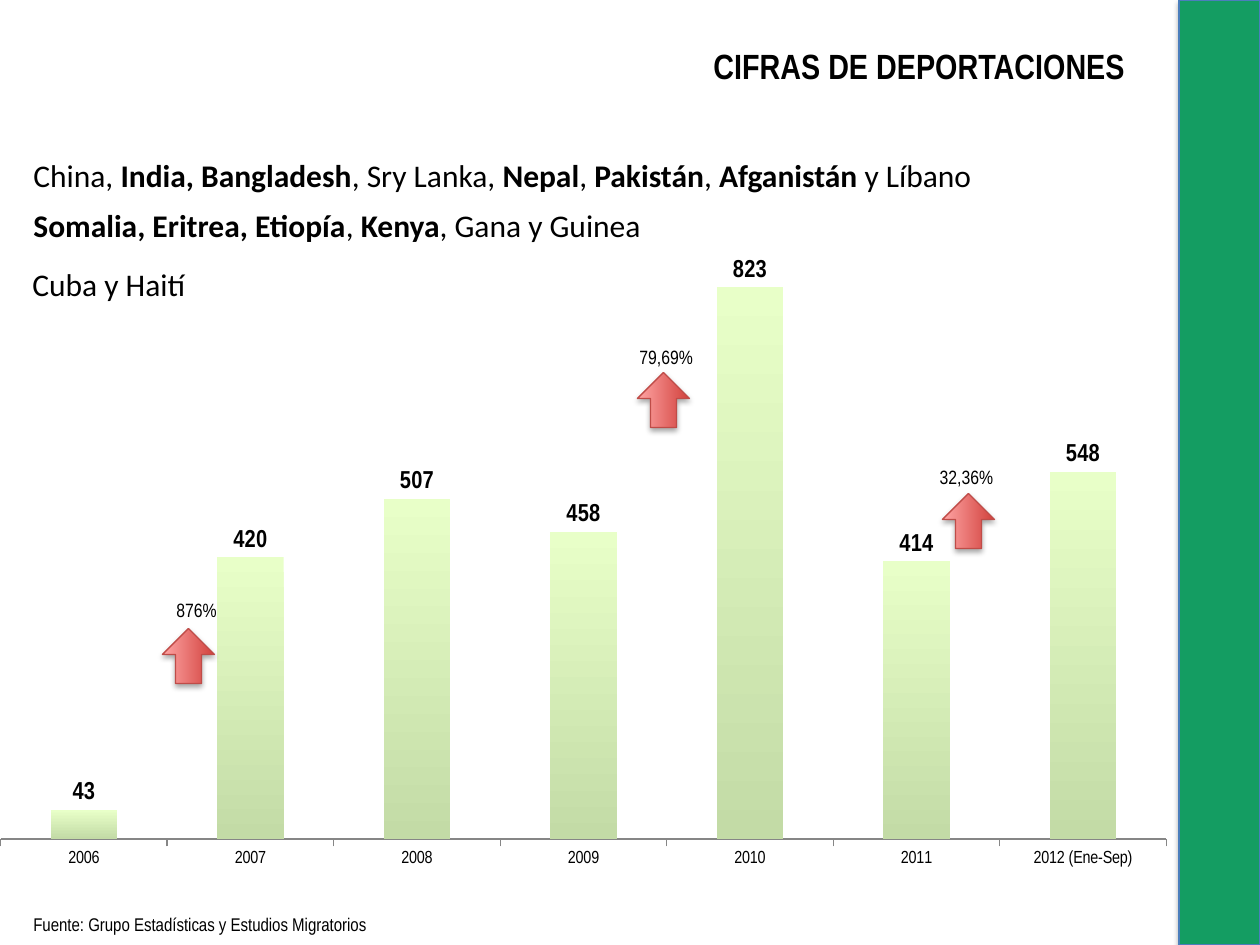
from dataclasses import dataclass

from lxml.etree import SubElement
from pptx import Presentation
from pptx.chart.data import CategoryChartData
from pptx.dml.color import RGBColor
from pptx.enum.chart import XL_CHART_TYPE as ChartType
from pptx.enum.chart import XL_LABEL_POSITION as LabelPosition
from pptx.enum.chart import XL_TICK_MARK as TickMark
from pptx.enum.shapes import MSO_SHAPE as ShapeKind
from pptx.enum.text import MSO_ANCHOR as Anchor
from pptx.enum.text import MSO_AUTO_SIZE as AutoSize
from pptx.enum.text import PP_ALIGN as Align
from pptx.oxml import parse_xml
from pptx.oxml.ns import nsdecls, qn
from pptx.util import Emu, Pt

PX = 914400 / 126
BLACK = RGBColor(0x00, 0x00, 0x00)
GREEN = RGBColor(0x14, 0x9D, 0x62)
BLUE = RGBColor(0x4B, 0x7E, 0xBC)
RED_DARK = RGBColor(0xD1, 0x40, 0x3C)
RED_LIGHT = RGBColor(0xFF, 0xA6, 0xA5)
RED_LINE = RGBColor(0xBF, 0x4C, 0x48)
LIME_LIGHT = RGBColor(0xE8, 0xFF, 0xC8)
LIME_DARK = RGBColor(0xC3, 0xDB, 0xA6)
AXIS_GREY = RGBColor(0x86, 0x86, 0x86)
NARROW = "Arial Narrow"
BODY = "Calibri"


@dataclass
class Span:
    text: str
    bold: bool = False


@dataclass
class CountryLine:
    left: int
    top: int
    width: int
    spans: list[Span]


@dataclass
class Increase:
    text: str
    text_left: int
    text_top: int
    arrow_left: int
    arrow_top: int
    align: Align = Align.LEFT


COUNTRY_LINES = [
    CountryLine(21, 150, 968, [
        Span("China, "), Span("India, Bangladesh", True), Span(", Sry Lanka, "),
        Span("Nepal", True), Span(", "), Span("Pakistán", True), Span(", "),
        Span("Afganistán", True), Span(" y Líbano"),
    ]),
    CountryLine(21, 200, 639, [
        Span("Somalia, Eritrea, Etiopía", True), Span(", "),
        Span("Kenya", True), Span(", Gana y Guinea"),
    ]),
    CountryLine(20, 259, 186, [Span("Cuba y Haití")]),
]
INCREASES = [
    Increase("876%", 164, 592, 161, 630),
    Increase("79,69%", 627, 339, 636, 374),
    Increase("32,36%", 911, 459, 941, 495, Align.CENTER),
]
DEPORTATIONS = {
    "2006": 43, "2007": 420, "2008": 507, "2009": 458,
    "2010": 823, "2011": 414, "2012 (Ene-Sep)": 548,
}


def px(*lengths: int) -> list[Emu]:
    return [Emu(round(length * PX)) for length in lengths]


def write(box, spans: list[Span], *, size: float, font: str = NARROW,
          align: Align = Align.LEFT, wrap: bool = True) -> None:
    frame = box.text_frame
    frame.word_wrap = wrap
    frame.auto_size = AutoSize.SHAPE_TO_FIT_TEXT
    para = frame.paragraphs[0]
    para.alignment = align
    for span in spans:
        run = para.add_run()
        run.text = span.text
        run.font.name = font
        run.font.size = Pt(size)
        run.font.bold = span.bold
        run.font.color.rgb = BLACK


def set_gradient(fill, start: RGBColor, end: RGBColor, angle: int) -> None:
    fill.gradient()
    fill.gradient_angle = angle
    for stop, color in zip(fill.gradient_stops, (start, end)):
        stop.color.rgb = color


def add_shadowed(page, kind: ShapeKind, bounds: list[Emu], line: RGBColor):
    shape = page.shapes.add_shape(kind, *bounds)
    shape.line.color.rgb = line
    shape.line.width = Pt(0.75)
    shape.shadow.inherit = False
    effects = shape._element.spPr.find(qn("a:effectLst"))
    effects.append(parse_xml(
        f'<a:outerShdw {nsdecls("a")} blurRad="40000" dist="23000" dir="5400000" '
        'rotWithShape="0"><a:srgbClr val="000000"><a:alpha val="35000"/>'
        '</a:srgbClr></a:outerShdw>'))
    return shape


def add_deportation_chart(page) -> None:
    data = CategoryChartData()
    data.categories = list(DEPORTATIONS)
    data.add_series("Deportaciones", list(DEPORTATIONS.values()))
    chart = page.shapes.add_chart(
        ChartType.COLUMN_CLUSTERED, *px(0, 212, 1167, 678), data).chart
    chart.has_legend = False
    chart.has_title = False
    chart.font.name = NARROW
    chart.font.size = Pt(10)
    chart.font.color.rgb = BLACK

    values = chart.value_axis
    values.visible = False
    values.has_major_gridlines = False
    values.minimum_scale = 0
    values.maximum_scale = 900
    years = chart.category_axis
    years.major_tick_mark = TickMark.OUTSIDE
    years.format.line.color.rgb = AXIS_GREY

    plot = chart.plots[0]
    plot.gap_width = 150
    plot.vary_by_categories = False
    set_gradient(plot.series[0].format.fill, LIME_LIGHT, LIME_DARK, 270)
    plot.has_data_labels = True
    labels = plot.data_labels
    labels.show_value = True
    labels.position = LabelPosition.OUTSIDE_END
    labels.font.name = NARROW
    labels.font.size = Pt(14)
    labels.font.bold = True
    labels.font.color.rgb = BLACK

    plot_area = chart._chartSpace.chart.plotArea
    layout = plot_area.find(qn("c:layout"))
    if layout is None:
        layout = SubElement(plot_area, qn("c:layout"))
        plot_area.insert(0, layout)
    manual = SubElement(layout, qn("c:manualLayout"))
    settings = {"layoutTarget": "inner", "xMode": "edge", "yMode": "edge",
                "x": "0", "y": "0.035", "w": "1", "h": "0.89"}
    for name, value in settings.items():
        SubElement(manual, qn(f"c:{name}")).set("val", value)


def add_increase(page, increase: Increase) -> None:
    bounds = px(increase.arrow_left, increase.arrow_top, 55, 52)
    arrow = add_shadowed(page, ShapeKind.RIGHT_ARROW, bounds, RED_LINE)
    arrow.rotation = 270
    set_gradient(arrow.fill, RED_DARK, RED_LIGHT, 90)
    box = page.shapes.add_textbox(
        *px(increase.text_left, increase.text_top, 111, 37))
    write(box, [Span(increase.text)], size=11, align=increase.align)


def main() -> None:
    deck = Presentation()
    deck.slide_width, deck.slide_height = px(1260, 945)
    page = deck.slides.add_slide(deck.slide_layouts[5])

    band = add_shadowed(page, ShapeKind.RECTANGLE, px(1179, 0, 81, 945), BLUE)
    band.fill.solid()
    band.fill.fore_color.rgb = GREEN

    title = page.shapes.title
    title.left, title.top, title.width, title.height = px(709, 44, 416, 43)
    frame = title.text_frame
    frame.margin_left = frame.margin_right = frame.margin_top = frame.margin_bottom = 0
    frame.vertical_anchor = Anchor.TOP
    write(title, [Span("CIFRAS DE DEPORTACIONES", True)], size=20,
          align=Align.RIGHT, wrap=False)

    add_deportation_chart(page)
    source = page.shapes.add_textbox(*px(21, 907, 742, 37))
    write(source, [Span("Fuente: Grupo Estadísticas y Estudios Migratorios")], size=10.5)
    for increase in INCREASES:
        add_increase(page, increase)
    for line in COUNTRY_LINES:
        box = page.shapes.add_textbox(*px(line.left, line.top, line.width, 50))
        write(box, line.spans, size=18, font=BODY, wrap=False)

    deck.save("out.pptx")


if __name__ == "__main__":
    main()
